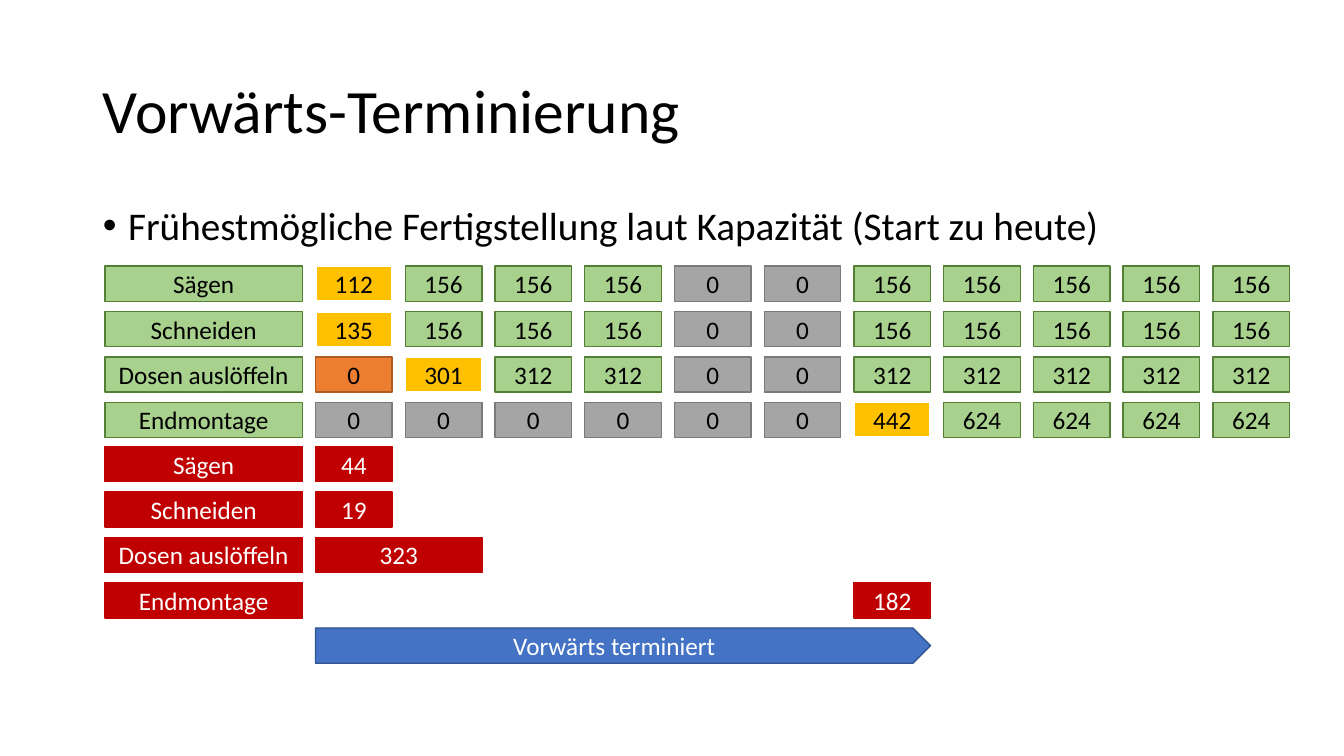
from lxml.etree import SubElement
from pptx import Presentation
from pptx.dml.color import RGBColor
from pptx.enum.shapes import MSO_SHAPE as Shape
from pptx.enum.text import MSO_ANCHOR as Anchor, MSO_AUTO_SIZE as AutoSize, PP_ALIGN as Align
from pptx.oxml.ns import qn
from pptx.util import Inches, Pt

# Content
HEADING = "Vorwärts-Terminierung"
BULLET = "Frühestmögliche Fertigstellung laut Kapazität (Start zu heute)"
ARROW = "Vorwärts terminiert"
STEPS = ["Sägen", "Schneiden", "Dosen auslöffeln", "Endmontage"]

# Remaining capacity per day, with one status letter per day
CAPACITY = [
    ([112, 156, 156, 156, 0, 0, 156, 156, 156, 156, 156], "pfffccfffff"),
    ([135, 156, 156, 156, 0, 0, 156, 156, 156, 156, 156], "pfffccfffff"),
    ([0, 301, 312, 312, 0, 0, 312, 312, 312, 312, 312], "upffccfffff"),
    ([0, 0, 0, 0, 0, 0, 442, 624, 624, 624, 624], "ccccccpffff"),
]
STATUS = {"f": "free", "p": "partly", "u": "used", "c": "closed"}

# Demand per step: minutes, first day, number of days
DEMAND = [(44, 0, 1), (19, 0, 1), (323, 0, 2), (182, 6, 1)]
ARROW_DAYS = 7

# Fill, outline and text colours
COLORS = {
    "free": ("A9D18E", "538035", "000000"),
    "partly": ("FFC000", "FFFFFF", "000000"),
    "used": ("ED7D31", "AF5C24", "000000"),
    "closed": ("A5A5A5", "7A7A7A", "000000"),
    "demand": ("C00000", "C00000", "FFFFFF"),
    "arrow": ("4472C4", "325491", "FFFFFF"),
}

# Grid in inches
LABEL_LEFT, LABEL_WIDTH = 1.04, 1.96
DAY_LEFT, DAY_WIDTH, DAY_PITCH = 3.13, 0.76, 0.89
CAPACITY_TOP, DEMAND_TOP = 2.64, 4.43
ROW_HEIGHT, ROW_PITCH = 0.35, 0.45

deck = Presentation()
deck.slide_width, deck.slide_height = Inches(13.33), Inches(7.5)
slide = deck.slides.add_slide(deck.slide_layouts[1])


def write(frame, text, size=18, color="000000", align=Align.CENTER,
          anchor=Anchor.MIDDLE, spacing=1.0, bullet=False):
    frame.text = text
    frame.word_wrap = True
    frame.auto_size = AutoSize.NONE
    frame.vertical_anchor = anchor
    paragraph = frame.paragraphs[0]
    paragraph.alignment = align
    paragraph.line_spacing = spacing
    paragraph.space_before = Pt(0)
    if bullet:
        properties = paragraph._p.get_or_add_pPr()
        properties.set("marL", str(Inches(0.25)))
        properties.set("indent", str(-Inches(0.25)))
        SubElement(properties, qn("a:buFont"), typeface="Arial")
        SubElement(properties, qn("a:buChar"), char="•")
    font = paragraph.runs[0].font
    font.size, font.name = Pt(size), "Calibri"
    font.color.rgb = RGBColor.from_string(color)


def place(placeholder, left, top, width, height):
    placeholder.left, placeholder.top = Inches(left), Inches(top)
    placeholder.width, placeholder.height = Inches(width), Inches(height)


def box(text, left, top, width, role, preset=Shape.RECTANGLE):
    fill, outline, ink = COLORS[role]
    bar = slide.shapes.add_shape(
        preset, Inches(left), Inches(top), Inches(width), Inches(ROW_HEIGHT))
    bar.shadow.inherit = False
    bar.fill.solid()
    bar.fill.fore_color.rgb = RGBColor.from_string(fill)
    bar.line.color.rgb = RGBColor.from_string(outline)
    bar.line.width = Pt(1.5 if role == "partly" else 1)
    write(bar.text_frame, text, color=ink)
    return bar


def day_box(text, day, days, top, role, preset=Shape.RECTANGLE):
    width = (days - 1) * DAY_PITCH + DAY_WIDTH
    return box(text, DAY_LEFT + day * DAY_PITCH, top, width, role, preset)


# Title and bullet
title, body = slide.placeholders
place(title, 0.92, 0.4, 11.5, 1.45)
write(title.text_frame, HEADING, size=44, align=Align.LEFT, spacing=0.9)
place(body, 0.92, 2, 11.5, 0.58)
write(body.text_frame, BULLET, size=28, align=Align.LEFT, anchor=Anchor.TOP,
      spacing=0.9, bullet=True)

# Capacity and demand rows
for row, step in enumerate(STEPS):
    capacity_top = CAPACITY_TOP + row * ROW_PITCH
    box(step, LABEL_LEFT, capacity_top, LABEL_WIDTH, "free")
    for day, (minutes, letter) in enumerate(zip(*CAPACITY[row])):
        day_box(str(minutes), day, 1, capacity_top, STATUS[letter])

    demand_top = DEMAND_TOP + row * ROW_PITCH
    box(step, LABEL_LEFT, demand_top, LABEL_WIDTH, "demand")
    needed, first_day, days = DEMAND[row]
    day_box(str(needed), first_day, days, demand_top, "demand")

# Schedule arrow
arrow_top = DEMAND_TOP + len(STEPS) * ROW_PITCH
schedule = day_box(ARROW, 0, ARROW_DAYS, arrow_top, "arrow", Shape.RIGHT_ARROW)
schedule.adjustments[0] = 1
schedule.adjustments[1] = 0.5

deck.save("out.pptx")
